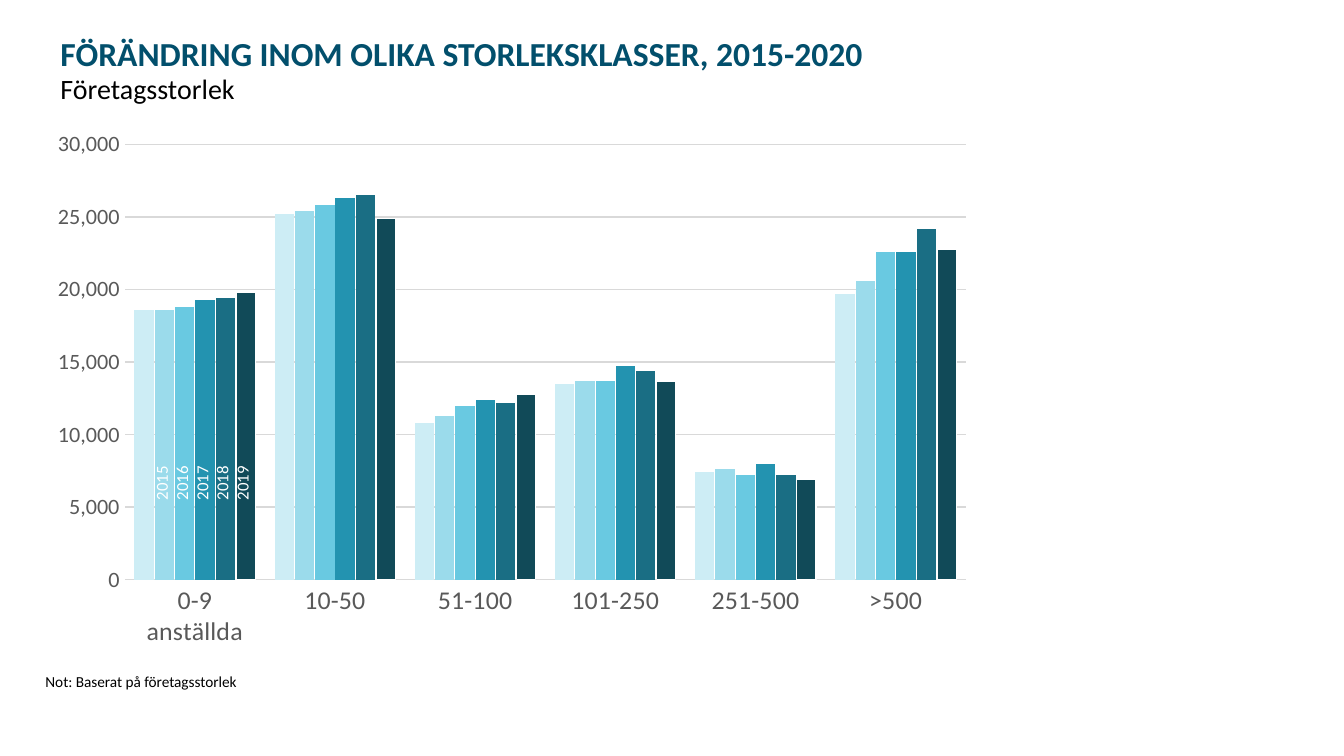
from dataclasses import dataclass
from lxml.etree import SubElement
from pptx import Presentation
from pptx.chart.data import CategoryChartData
from pptx.dml.color import RGBColor
from pptx.enum.chart import XL_CHART_TYPE, XL_TICK_MARK
from pptx.enum.text import MSO_ANCHOR, MSO_AUTO_SIZE, PP_ALIGN
from pptx.oxml.ns import qn
from pptx.util import Pt


@dataclass(frozen=True)
class Theme:
    font: str = "Calibri"
    title: str = "024F6C"
    text: str = "000000"
    axis: str = "595959"
    grid: str = "D9D9D9"
    white: str = "FFFFFF"
    bars: tuple = ("CDEDF5", "9BDBEB", "69C9E1", "2393B0", "1A6E84", "114A58")
    title_size: float = 18
    subtitle_size: float = 15
    category_size: float = 14
    value_size: float = 12
    chart_size: float = 10
    year_size: float = 9
    note_size: float = 8.2


THEME = Theme()
PX = 4572


def style_font(font, size, color, bold=False):
    font.name = THEME.font
    font.size = Pt(size)
    font.bold = bold
    font.color.rgb = RGBColor.from_string(color)


def fill_box(box, bounds, text, size, color, bold=False):
    box.left, box.top, box.width, box.height = [length * PX for length in bounds]
    frame = box.text_frame
    frame.text = text
    frame.auto_size = MSO_AUTO_SIZE.NONE
    para = frame.paragraphs[0]
    properties = para._p.get_or_add_pPr()
    properties.set("marL", "0")
    properties.set("indent", "0")
    SubElement(properties, qn("a:buNone"))
    para.alignment = PP_ALIGN.LEFT
    para.space_before = Pt(0)
    style_font(para.font, size, color, bold)
    return frame


deck = Presentation()
deck.slide_width = 2000 * PX
deck.slide_height = 1125 * PX
page = deck.slides.add_slide(deck.slide_layouts[1])

title = fill_box(page.shapes.title, (90, 44, 1818, 64),
                 "FÖRÄNDRING INOM OLIKA STORLEKSKLASSER, 2015-2020",
                 THEME.title_size, THEME.title, True)
title.vertical_anchor = MSO_ANCHOR.BOTTOM
title.margin_left = title.margin_right = title.margin_top = title.margin_bottom = 0
title.paragraphs[0].line_spacing = 0.7

subtitle = fill_box(page.placeholders[1], (90, 108, 1818, 60), "Företagsstorlek",
                    THEME.subtitle_size, THEME.text)
subtitle.margin_left = subtitle.margin_right = 0
subtitle.margin_top = 4 * PX
subtitle.margin_bottom = 10 * PX
subtitle.paragraphs[0].line_spacing = 0.9
subtitle.paragraphs[0].space_after = Pt(4.5)

employees = CategoryChartData(number_format="#,##0")
employees.categories = ["0-9 anställda", "10-50", "51-100", "101-250", "251-500", ">500"]
series_values = [
    (18600, 25200, 10800, 13500, 7400, 19700),
    (18600, 25400, 11300, 13700, 7600, 20600),
    (18800, 25800, 12000, 13700, 7200, 22600),
    (19300, 26300, 12400, 14700, 8000, 22600),
    (19400, 26500, 12200, 14400, 7200, 24200),
    (19800, 24900, 12800, 13700, 6900, 22800),
]
for number, values in enumerate(series_values, 1):
    employees.add_series(f"Series {number}", values)
chart = page.shapes.add_chart(XL_CHART_TYPE.COLUMN_CLUSTERED, 86 * PX, 170 * PX,
                              1376 * PX, 794 * PX, employees).chart
chart.has_legend = False
chart.has_title = False
style_font(chart.font, THEME.chart_size, THEME.text)

plot = chart.plots[0]
plot.gap_width = 100
plot.overlap = -5
plot.vary_by_categories = False
for series, color in zip(plot.series, THEME.bars):
    series.format.fill.solid()
    series.format.fill.fore_color.rgb = RGBColor.from_string(color)
last_line = plot.series[-1].format.line
last_line.width = Pt(0.75)
last_line.color.rgb = RGBColor.from_string(THEME.white)

category_axis, value_axis = chart.category_axis, chart.value_axis
for axis, size in ((category_axis, THEME.category_size), (value_axis, THEME.value_size)):
    axis.major_tick_mark = XL_TICK_MARK.NONE
    axis.minor_tick_mark = XL_TICK_MARK.NONE
    style_font(axis.tick_labels.font, size, THEME.axis)
value_axis.minimum_scale = 0
value_axis.maximum_scale = 30000
value_axis.major_unit = 5000
value_axis.tick_labels.number_format = "#,##0"
value_axis.tick_labels.number_format_is_linked = False
value_axis.format.line.fill.background()
for line in (category_axis.format.line, value_axis.major_gridlines.format.line):
    line.width = Pt(0.75)
    line.color.rgb = RGBColor.from_string(THEME.grid)

plot_area = chart._chartSpace.chart.plotArea
for old_layout in plot_area.findall(qn("c:layout")):
    plot_area.remove(old_layout)
layout = SubElement(plot_area, qn("c:layout"))
plot_area.insert(0, layout)
manual = SubElement(layout, qn("c:manualLayout"))
for tag, value in (("layoutTarget", "inner"), ("xMode", "edge"), ("yMode", "edge"),
                   ("x", "0.063"), ("y", "0.058"), ("w", "0.919"), ("h", "0.837")):
    SubElement(manual, qn(f"c:{tag}")).set("val", value)

note = fill_box(page.shapes.add_textbox(0, 0, 0, 0), (48, 990, 674, 46),
                "Not: Baserat på företagsstorlek", THEME.note_size, THEME.text)
note.word_wrap = False

for index in range(5):
    year_box = page.shapes.add_textbox(0, 0, 0, 0)
    year = fill_box(year_box, (196 + 30 * index, 715, 68, 30), str(2015 + index),
                    THEME.year_size, THEME.white)
    year.word_wrap = False
    year_box.rotation = 270

deck.save("out.pptx")
